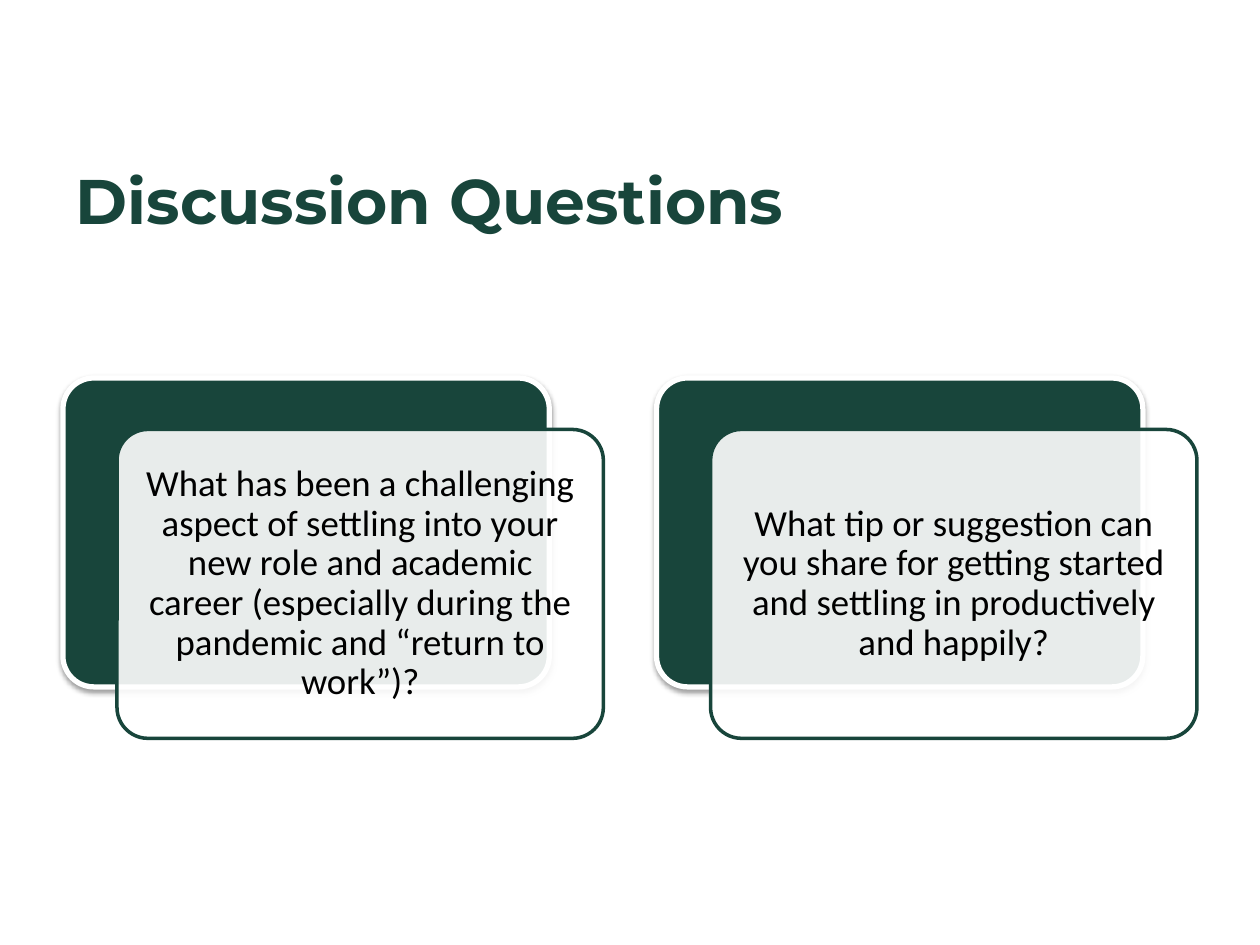
from lxml.etree import SubElement
from pptx import Presentation
from pptx.dml.color import RGBColor
from pptx.enum.shapes import MSO_SHAPE
from pptx.enum.text import MSO_ANCHOR, MSO_AUTO_SIZE, PP_ALIGN
from pptx.oxml.ns import qn
from pptx.util import Pt

GREEN = RGBColor(0x18, 0x45, 0x3B)
WHITE = RGBColor(0xFF, 0xFF, 0xFF)
BLACK = RGBColor(0x00, 0x00, 0x00)

CARD_WIDTH, CARD_HEIGHT = 277.9, 176.5
CARDS_LEFT, CARDS_TOP = 36, 216
CARD_PITCH = 339.2
FRONT_SHIFT_X, FRONT_SHIFT_Y = 30.9, 29.4

QUESTIONS = [
    "What has been a challenging aspect of settling into your new role and "
    "academic career (especially during the pandemic and “return to work”)?",
    "What tip or suggestion can you share for getting started and settling in "
    "productively and happily?",
]


def set_attributes(target, values):
    for name, value in values.items():
        setattr(target, name, value)


def add_alpha(color_element, percent):
    SubElement(color_element, qn("a:alpha"), val=str(percent * 1000))


def add_soft_shadow(shape):
    """Give the shape a faint black shadow falling straight down."""
    effects = shape._element.spPr.find(qn("a:effectLst"))
    shadow = SubElement(
        effects, qn("a:outerShdw"), blurRad=str(Pt(3.1)), dist=str(Pt(1.6)),
        dir=str(90 * 60000), rotWithShape="0")
    add_alpha(SubElement(shadow, qn("a:srgbClr"), val=str(BLACK)), 38)


def add_card(page, left, top, fill, line, line_width):
    card = page.shapes.add_shape(
        MSO_SHAPE.ROUNDED_RECTANGLE, Pt(left), Pt(top),
        Pt(CARD_WIDTH), Pt(CARD_HEIGHT))
    card.adjustments[0] = 0.1
    card.shadow.inherit = False
    card.fill.solid()
    card.fill.fore_color.rgb = fill
    card.line.color.rgb = line
    card.line.width = Pt(line_width)
    return card


def write_text(box, text, frame_format, paragraph_format, font_format, color):
    frame = box.text_frame
    set_attributes(frame, frame_format)
    para = frame.paragraphs[0]
    set_attributes(para, paragraph_format)
    span = para.add_run()
    span.text = text
    set_attributes(span.font, font_format)
    span.font.color.rgb = color


def add_title(page):
    title = page.shapes.title
    set_attributes(title, {"left": Pt(36), "top": Pt(87.1),
                           "width": Pt(648), "height": Pt(64.8)})
    write_text(
        title, "Discussion Questions",
        {"word_wrap": True, "auto_size": MSO_AUTO_SIZE.NONE,
         "vertical_anchor": MSO_ANCHOR.TOP, "margin_top": Pt(5)},
        {"alignment": PP_ALIGN.LEFT},
        {"name": "Montserrat", "size": Pt(36), "bold": True}, GREEN)


def add_question(page, left, question):
    """Add a solid card with a translucent question card in front of it."""
    add_soft_shadow(add_card(page, left, CARDS_TOP, GREEN, WHITE, 3))
    front = add_card(page, left + FRONT_SHIFT_X, CARDS_TOP + FRONT_SHIFT_Y,
                     WHITE, GREEN, 2)
    add_alpha(front._element.spPr.find(qn("a:solidFill"))[0], 90)
    margins = {f"margin_{side}": Pt(6.3)
               for side in ("left", "top", "right", "bottom")}
    write_text(
        front, question,
        {"word_wrap": True, "vertical_anchor": MSO_ANCHOR.MIDDLE, **margins},
        {"alignment": PP_ALIGN.CENTER, "line_spacing": 0.9},
        {"name": "Calibri", "size": Pt(21)}, BLACK)


def main():
    deck = Presentation()
    deck.slide_width, deck.slide_height = Pt(720), Pt(540)
    page = deck.slides.add_slide(deck.slide_layouts[5])
    add_title(page)
    for index, question in enumerate(QUESTIONS):
        add_question(page, CARDS_LEFT + index * CARD_PITCH, question)
    deck.save("out.pptx")


if __name__ == "__main__":
    main()
